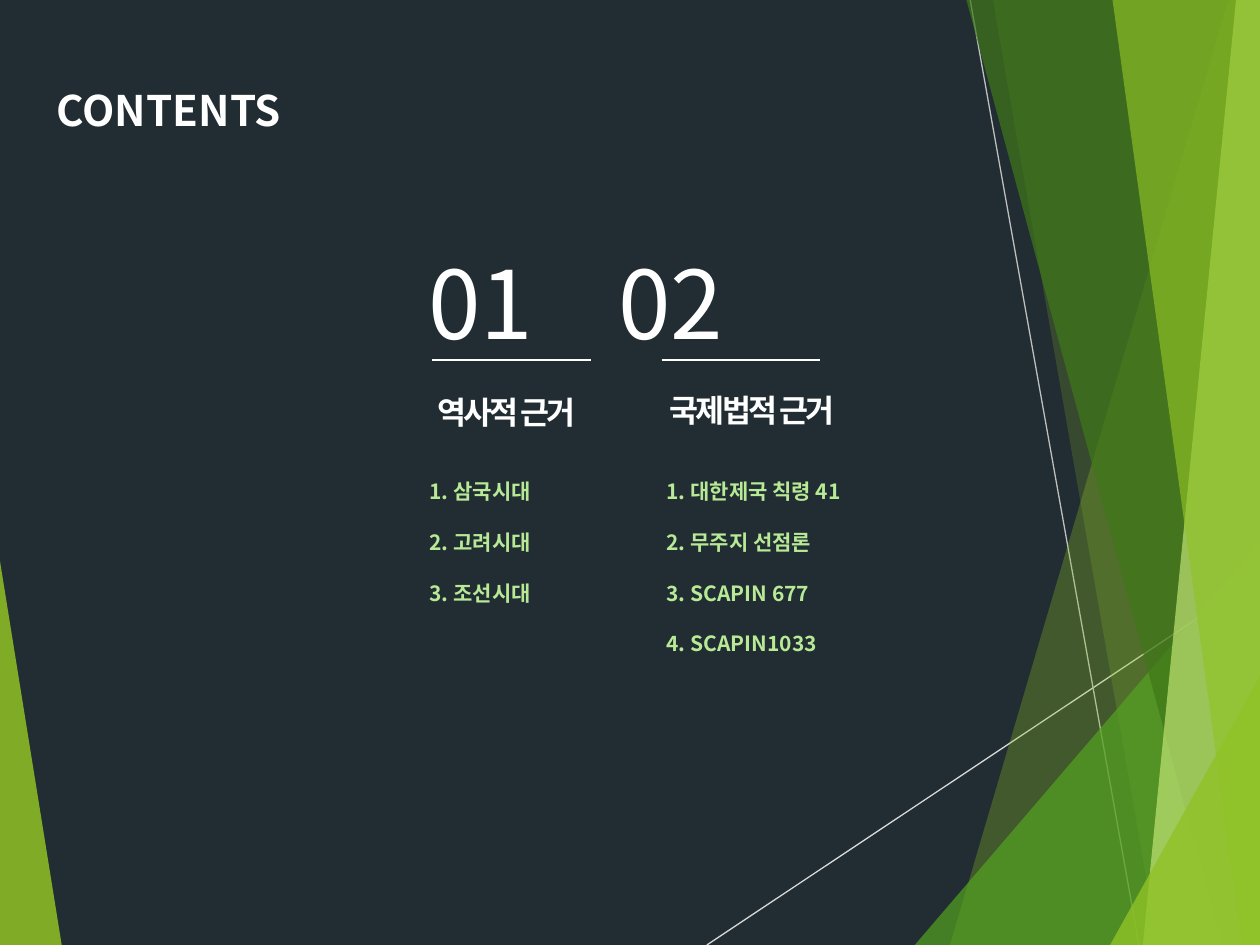
import pptx
import pptx.util
import pptx.dml.color
import pptx.enum.shapes
import pptx.enum.text
import pptx.oxml.ns
import lxml.etree

FONT = "Noto Sans CJK KR"
WHITE = "FFFFFF"
LIME = "90C226"
COLS, ROWS = 100, 75
LEFT = pptx.enum.text.PP_ALIGN.LEFT
MID = pptx.enum.text.PP_ALIGN.CENTER


def cell(num):
    return pptx.util.Inches(num / 10)


def paint(fill, code):
    fill.solid()
    fill.fore_color.rgb = pptx.dml.color.RGBColor.from_string(code)


def add_tag(node, name, **attrs):
    return lxml.etree.SubElement(node, pptx.oxml.ns.qn(name), **attrs)


def add_shard(slide, code, share, *spots):
    dots = [(cell(x), cell(y)) for x, y in spots]
    form = slide.shapes.build_freeform(*dots[0])
    form.add_line_segments(dots[1:], close=True)
    shape = form.convert_to_shape()
    shape.shadow.inherit = False
    shape.line.fill.background()
    paint(shape.fill, code)
    tone = shape.fill._xPr.find(".//" + pptx.oxml.ns.qn("a:srgbClr"))
    add_tag(tone, "a:alpha", val=str(share * 1000))


def add_rule(slide, start, end, code, width):
    kind = pptx.enum.shapes.MSO_CONNECTOR.STRAIGHT
    line = slide.shapes.add_connector(kind, *map(cell, start + end))
    paint(line.line.fill, code)
    line.line.width = pptx.util.Pt(width)
    add_tag(line._element.spPr, "a:effectLst")


def place(shape, box):
    shape.left, shape.top, shape.width, shape.height = map(cell, box)


def write(shape, lines, size, code=WHITE, bold=True, align=LEFT, gap=0, track=0):
    frame = shape.text_frame
    frame.word_wrap = True
    frame.auto_size = pptx.enum.text.MSO_AUTO_SIZE.NONE
    frame.vertical_anchor = pptx.enum.text.MSO_ANCHOR.TOP
    for num, text in enumerate(lines):
        para = frame.add_paragraph() if num else frame.paragraphs[0]
        para.alignment = align
        para.line_spacing = pptx.util.Pt(round(size * 1.27, 1))
        para.space_before = pptx.util.Pt(0)
        para.space_after = pptx.util.Pt(gap)
        run = para.add_run()
        run.text = text
        run.font.name = FONT
        run.font.size = pptx.util.Pt(size)
        run.font.bold = bold
        paint(run.font.fill, code)
        props = run._r.get_or_add_rPr()
        add_tag(props, "a:ea", typeface=FONT)
        if track:
            props.set("spc", str(track))


def add_text(slide, box, text, size, **style):
    shape = slide.shapes.add_textbox(*map(cell, box))
    write(shape, [text], size, **style)


def fill_list(shape, box, lines):
    place(shape, box)
    write(shape, lines, 12, code="B7E996", gap=13.7)
    for para in shape.text_frame.paragraphs:
        props = para._p.get_or_add_pPr()
        props.set("marL", "0")
        props.set("indent", "0")
        add_tag(props, "a:buNone")


def add_decor(slide):
    end = COLS + 0.1
    add_shard(slide, LIME, 85, (-0.1, 43.9), (4.9, ROWS), (-0.1, ROWS))
    add_rule(slide, (56.1, ROWS), (end, 45.7), "D9D9D9", 0.75)
    add_rule(slide, (77, 0), (90.4, ROWS), "BFBFBF", 0.75)
    shards = [
        (LIME, 30, 97.5, 75.4, end),
        (LIME, 20, 78.8, 91.9, end),
        ("54A021", 72, None, 72.6, 42.9),
        ("3F7819", 70, 76.7, 97, end),
        ("C0E474", 70, 98.1, 90.7, end),
        (LIME, 65, 88.3, 98.6, COLS),
        (LIME, 80, None, 88.1, 53.5),
    ]
    for code, share, top, low, edge in shards:
        if top is None:
            spots = (low, ROWS), (end, edge), (end, ROWS)
        else:
            spots = (top, 0), (low, ROWS), (edge, ROWS), (edge, 0)
        add_shard(slide, code, share, *spots)


def main():
    deck = pptx.Presentation()
    deck.slide_width, deck.slide_height = cell(COLS), cell(ROWS)
    slide = deck.slides.add_slide(deck.slide_layouts[3])
    paint(slide.background.fill, "212D32")
    add_decor(slide)

    title, *lists = slide.placeholders
    place(title, (3.5, 6, 45.7, 5))
    write(title, ["CONTENTS"], 24)

    parts = [
        ("01", 33, 34.3, (32.7, 30.5, 15, 4), "역사적 근거",
         (33.1, 37.4, 15, 15.1),
         ["1. 삼국시대", "2. 고려시대", "3. 조선시대"]),
        ("02", 48.1, 52.5, (51.3, 30.4, 16.8, 4), "국제법적 근거",
         (51.9, 37.4, 21.7, 19.2),
         ["1. 대한제국 칙령 41", "2. 무주지 선점론",
          "3. SCAPIN 677", "4. SCAPIN1033"]),
    ]
    for body, part in zip(lists, parts):
        mark, left, rule, box, head, area, lines = part
        add_text(slide, (left, 18.4, 15, 10.1), mark, 54, bold=False)
        add_rule(slide, (rule, 28.6), (rule + 12.6, 28.6), WHITE, 1)
        add_text(slide, box, head, 18, align=MID, track=-150)
        fill_list(body, area, lines)

    deck.save("out.pptx")


if __name__ == "__main__":
    main()
